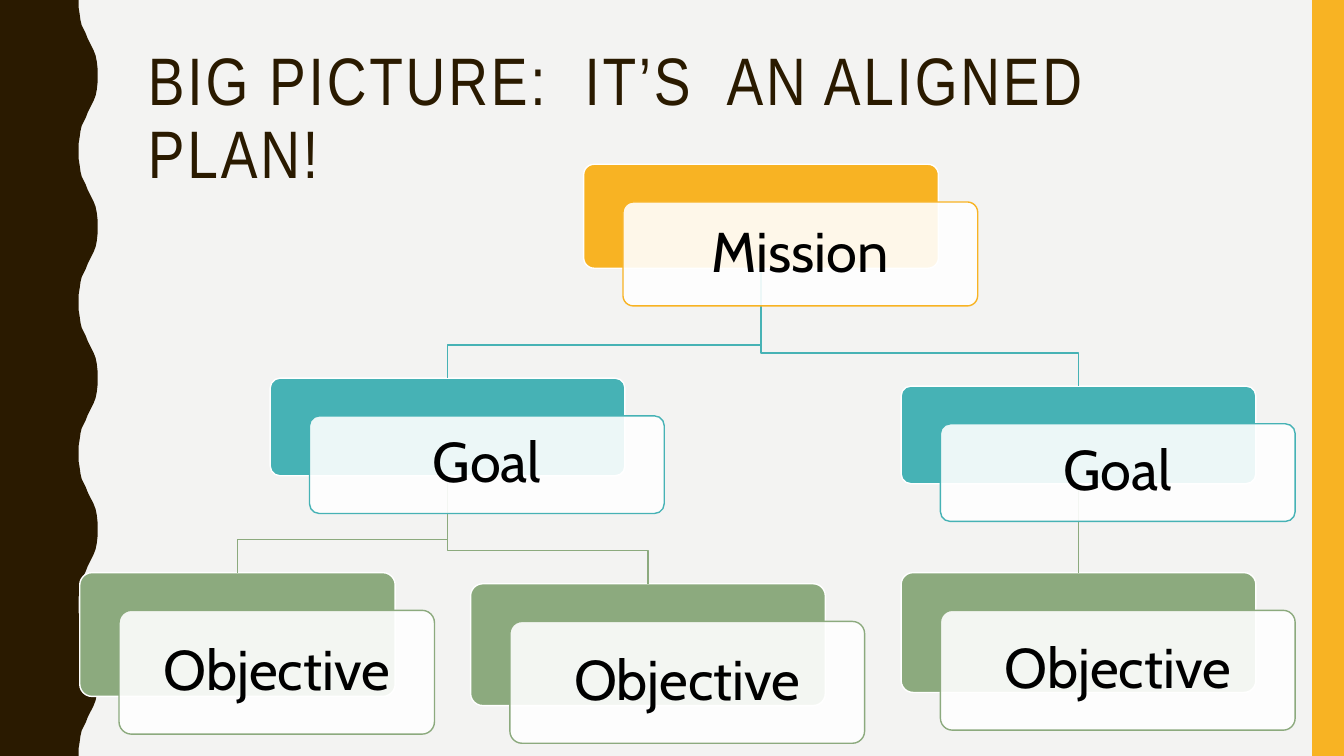
from dataclasses import dataclass
from typing import Optional

import pptx
import pptx.dml.color
import pptx.enum.shapes
import pptx.enum.text
import pptx.oxml
import pptx.oxml.ns
import pptx.util
from pptx.util import Cm


@dataclass(frozen=True)
class Theme:
    paper: str = "F3F3F2"
    bark: str = "2A1A00"
    amber: str = "F8B323"
    teal: str = "46B2B5"
    sage: str = "8CAA7E"
    white: str = "FFFFFF"
    black: str = "000000"
    title_font: str = "Arial Narrow"
    label_font: str = "Cabin"
    title_size: int = 48
    label_size: int = 40
    line_width: int = 1
    line_spacing: float = 0.9


@dataclass(frozen=True)
class Card:
    label: str
    color: str
    left: float
    top: float
    width: float
    height: float
    parent: Optional[int] = None

    @property
    def middle(self) -> float:
        return self.left + self.width / 2

    @property
    def bottom(self) -> float:
        return self.top + self.height


THEME = Theme()
PAGE_WIDTH, PAGE_HEIGHT = 33.87, 19.05
CARD_WIDTH = 8.94
FRONT_SHIFT_X, FRONT_SHIFT_Y = 0.99, 0.95
BEND_ABOVE_CHILD = 0.83
WAVE_COUNT, WAVE_PERIOD = 5, 3.81
HALF_WAVE = [
    (1.98, 0), (1.98, 0.18), (2.01, 0.36), (2.03, 0.51), (2.06, 0.64),
    (2.11, 0.74), (2.16, 0.84), (2.21, 0.97), (2.26, 1.07), (2.31, 1.17),
    (2.36, 1.27), (2.41, 1.4), (2.44, 1.55), (2.46, 1.73), (2.46, 1.9),
]

CARDS = [
    Card("Mission", THEME.amber, 14.71, 4.14, CARD_WIDTH, 2.62),
    Card("Goal", THEME.teal, 6.81, 9.53, CARD_WIDTH, 2.46, 0),
    Card("Goal", THEME.teal, 22.71, 9.73, CARD_WIDTH, 2.46, 0),
    Card("Objective", THEME.sage, 2.01, 14.43, 7.95, 3.12, 1),
    Card("Objective", THEME.sage, 11.86, 14.71, CARD_WIDTH, 3.07, 1),
    Card("Objective", THEME.sage, 22.71, 14.43, CARD_WIDTH, 3.02, 2),
]


def rgb(color: str) -> pptx.dml.color.RGBColor:
    return pptx.dml.color.RGBColor.from_string(color)


def paint(shape, fill: Optional[str], line: Optional[str] = None) -> None:
    shape.shadow.inherit = False
    if fill:
        shape.fill.solid()
        shape.fill.fore_color.rgb = rgb(fill)
    else:
        shape.fill.background()
    if line:
        shape.line.color.rgb = rgb(line)
        shape.line.width = pptx.util.Pt(THEME.line_width)
    else:
        shape.line.fill.background()


def write(shape, text: str, font: str, size: int, color: str):
    frame = shape.text_frame
    frame.word_wrap = True
    para = frame.paragraphs[0]
    para.text = text
    para.line_spacing = THEME.line_spacing
    para.font.name = font
    para.font.size = pptx.util.Pt(size)
    para.font.color.rgb = rgb(color)
    return para


def draw_outline(page, points: list[tuple[float, float]], close: bool):
    corners = [(Cm(x), Cm(y)) for x, y in points]
    builder = page.shapes.build_freeform(*corners[0])
    builder.add_line_segments(corners[1:], close=close)
    return builder.convert_to_shape()


def draw_wavy_edge(page) -> None:
    mirrored = [(x, WAVE_PERIOD - y) for x, y in reversed(HALF_WAVE[1:-1])]
    wave = HALF_WAVE + mirrored
    edge = [(x, y + index * WAVE_PERIOD) for index in range(WAVE_COUNT) for x, y in wave]
    points = [(0, 0), *edge, (HALF_WAVE[0][0], PAGE_HEIGHT), (0, PAGE_HEIGHT)]
    paint(draw_outline(page, points, True), THEME.bark)


def draw_side_bar(page) -> None:
    bar = page.shapes.add_shape(
        pptx.enum.shapes.MSO_SHAPE.RECTANGLE, Cm(33.07), 0, Cm(0.8), Cm(PAGE_HEIGHT)
    )
    paint(bar, THEME.amber)


def draw_title(page) -> None:
    box = page.shapes.add_textbox(Cm(3.48), Cm(1.07), Cm(28.27), Cm(4.14))
    para = write(box, "BIG PICTURE:  IT’S  AN ALIGNED PLAN!",
                 THEME.title_font, THEME.title_size, THEME.bark)
    para.runs[0]._r.get_or_add_rPr().set("spc", "200")


def draw_panel(page, card: Card, shift_x: float, shift_y: float, fill: str, line: str):
    panel = page.shapes.add_shape(
        pptx.enum.shapes.MSO_SHAPE.ROUNDED_RECTANGLE,
        Cm(card.left + shift_x), Cm(card.top + shift_y), Cm(card.width), Cm(card.height),
    )
    panel.adjustments[0] = 0.1
    paint(panel, fill, line)
    return panel


def draw_front(page, card: Card) -> None:
    panel = draw_panel(page, card, FRONT_SHIFT_X, FRONT_SHIFT_Y, THEME.white, card.color)
    fill_color = panel.fill._xPr.find(".//" + pptx.oxml.ns.qn("a:srgbClr"))
    alpha = pptx.oxml.parse_xml(f'<a:alpha {pptx.oxml.ns.nsdecls("a")} val="90000"/>')
    fill_color.append(alpha)
    frame = panel.text_frame
    frame.margin_left = frame.margin_right = Cm(0.51)
    frame.margin_top = frame.margin_bottom = Cm(0.51)
    frame.vertical_anchor = pptx.enum.text.MSO_ANCHOR.MIDDLE
    para = write(panel, card.label, THEME.label_font, THEME.label_size, THEME.black)
    para.alignment = pptx.enum.text.PP_ALIGN.CENTER


def draw_straight_link(page, parent_panel, child_panel, color: str) -> None:
    link = page.shapes.add_connector(pptx.enum.shapes.MSO_CONNECTOR.STRAIGHT, 0, 0, 0, 0)
    link.begin_connect(parent_panel, 2)
    link.end_connect(child_panel, 0)
    link.line.color.rgb = rgb(color)
    link.line.width = pptx.util.Pt(THEME.line_width)
    effects = pptx.oxml.parse_xml(f'<a:effectLst {pptx.oxml.ns.nsdecls("a")}/>')
    link._element.spPr.append(effects)


def draw_bent_link(page, parent: Card, child: Card) -> None:
    bend = child.top - BEND_ABOVE_CHILD
    points = [(parent.middle, parent.bottom), (parent.middle, bend),
              (child.middle, bend), (child.middle, child.top)]
    paint(draw_outline(page, points, False), None, child.color)


def draw_tree(page) -> None:
    panels = [draw_panel(page, card, 0, 0, card.color, THEME.white) for card in CARDS]
    for card, panel in zip(CARDS, panels):
        if card.parent is None:
            continue
        parent = CARDS[card.parent]
        if parent.middle == card.middle:
            draw_straight_link(page, panels[card.parent], panel, card.color)
        else:
            draw_bent_link(page, parent, card)
    for card in CARDS:
        draw_front(page, card)


def main() -> None:
    deck = pptx.Presentation()
    deck.slide_width, deck.slide_height = Cm(PAGE_WIDTH), Cm(PAGE_HEIGHT)
    page = deck.slides.add_slide(deck.slide_layouts[6])
    page.background.fill.solid()
    page.background.fill.fore_color.rgb = rgb(THEME.paper)
    draw_wavy_edge(page)
    draw_side_bar(page)
    draw_title(page)
    draw_tree(page)
    deck.save("out.pptx")


if __name__ == "__main__":
    main()
